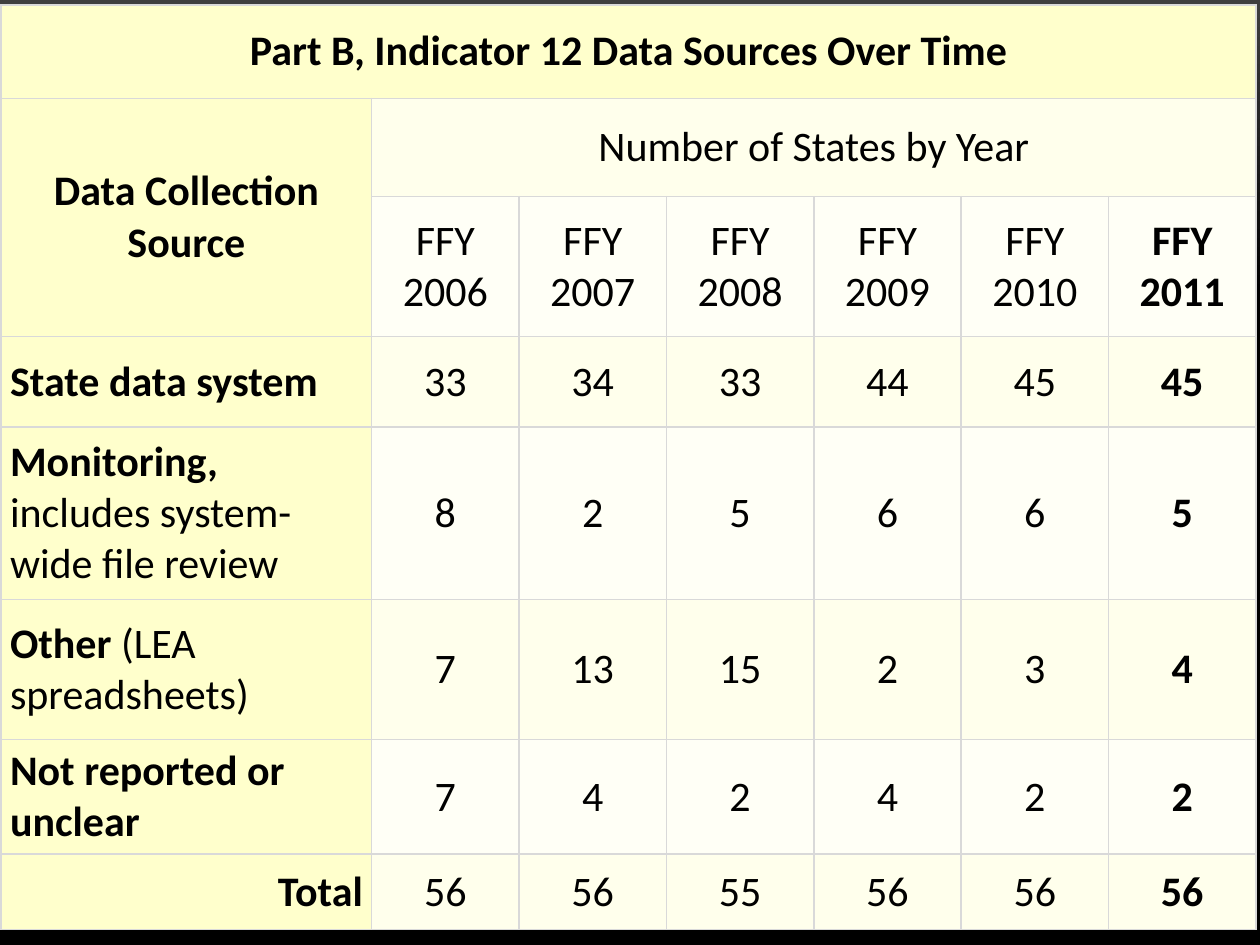
from lxml.etree import SubElement
from pptx import Presentation
from pptx.dml.color import RGBColor
from pptx.enum.text import MSO_ANCHOR, PP_ALIGN
from pptx.oxml.ns import qn
from pptx.util import Inches, Pt

BLACK = RGBColor(0x00, 0x00, 0x00)
CHARCOAL = RGBColor(0x3F, 0x3F, 0x3F)
YELLOW = RGBColor(0xFF, 0xFF, 0xCC)
CREAM = RGBColor(0xFF, 0xFF, 0xEC)
IVORY = RGBColor(0xFF, 0xFF, 0xF6)
GRID = RGBColor(0xD9, 0xD9, 0xD9)

YEARS = range(2006, 2012)
SOURCES = [
    ("State data system", "", [33, 34, 33, 44, 45, 45]),
    ("Monitoring, ", "includes system-wide file review", [8, 2, 5, 6, 6, 5]),
    ("Other ", "(LEA spreadsheets)", [7, 13, 15, 2, 3, 4]),
    ("Not reported or unclear", "", [7, 4, 2, 4, 2, 2]),
    ("Total", "", [56, 56, 55, 56, 56, 56]),
]
COLUMN_WIDTHS = [2.94] + [1.17] * len(YEARS)
ROW_HEIGHTS = [0.74, 0.78, 1.11, 0.72, 1.37, 1.11, 0.91, 0.6]


def style_cell(cell, color):
    cell.fill.solid()
    cell.fill.fore_color.rgb = color
    cell.vertical_anchor = MSO_ANCHOR.MIDDLE
    cell.margin_left = cell.margin_right = Inches(0.07)
    cell.margin_top = cell.margin_bottom = 0
    properties = cell._tc.get_or_add_tcPr()
    for position, side in enumerate(("a:lnL", "a:lnR", "a:lnT", "a:lnB")):
        border = SubElement(properties, qn(side), w=str(Pt(1)))
        paint = SubElement(border, qn("a:solidFill"))
        SubElement(paint, qn("a:srgbClr"), val=str(GRID))
        properties.insert(position, border)


def write(cell, text, bold=False, align=PP_ALIGN.CENTER):
    paragraph = cell.text_frame.paragraphs[0]
    paragraph.alignment = align
    run = paragraph.add_run()
    run.text = text
    run.font.name = "Calibri"
    run.font.size = Pt(24)
    run.font.bold = bold
    run.font.color.rgb = BLACK


prs = Presentation()
prs.slide_width, prs.slide_height = Inches(10), Inches(7.5)
slide = prs.slides.add_slide(prs.slide_layouts[6])

backdrop = slide.background.fill
backdrop.gradient()
backdrop.gradient_angle = 270
for stop, color, position in zip(backdrop.gradient_stops, (CHARCOAL, BLACK), (0, 0.31)):
    stop.color.rgb = color
    stop.position = position

table = slide.shapes.add_table(
    len(ROW_HEIGHTS), len(COLUMN_WIDTHS),
    Inches(0.01), Inches(0.04), Inches(9.99), Inches(7.34),
).table
for column, width in zip(table.columns, COLUMN_WIDTHS):
    column.width = Inches(width)
for row, height in zip(table.rows, ROW_HEIGHTS):
    row.height = Inches(height)

for row_index in range(len(ROW_HEIGHTS)):
    for column_index in range(len(COLUMN_WIDTHS)):
        heading = row_index == 0 or column_index == 0
        band = CREAM if row_index % 2 else IVORY
        style_cell(table.cell(row_index, column_index), YELLOW if heading else band)

table.cell(0, 0).merge(table.cell(0, 6))
table.cell(1, 0).merge(table.cell(2, 0))
table.cell(1, 1).merge(table.cell(1, 6))
write(table.cell(0, 0), "Part B, Indicator 12 Data Sources Over Time", True)
write(table.cell(1, 0), "Data Collection Source", True)
write(table.cell(1, 1), "Number of States by Year")

for column_index, year in enumerate(YEARS, 1):
    write(table.cell(2, column_index), f"FFY {year}", year == YEARS[-1])

for row_index, (source, detail, counts) in enumerate(SOURCES, 3):
    label = table.cell(row_index, 0)
    align = PP_ALIGN.RIGHT if source == "Total" else PP_ALIGN.LEFT
    write(label, source, True, align)
    if detail:
        write(label, detail, False, align)
    for column_index, count in enumerate(counts, 1):
        write(table.cell(row_index, column_index), str(count), column_index == len(YEARS))

prs.save("out.pptx")
